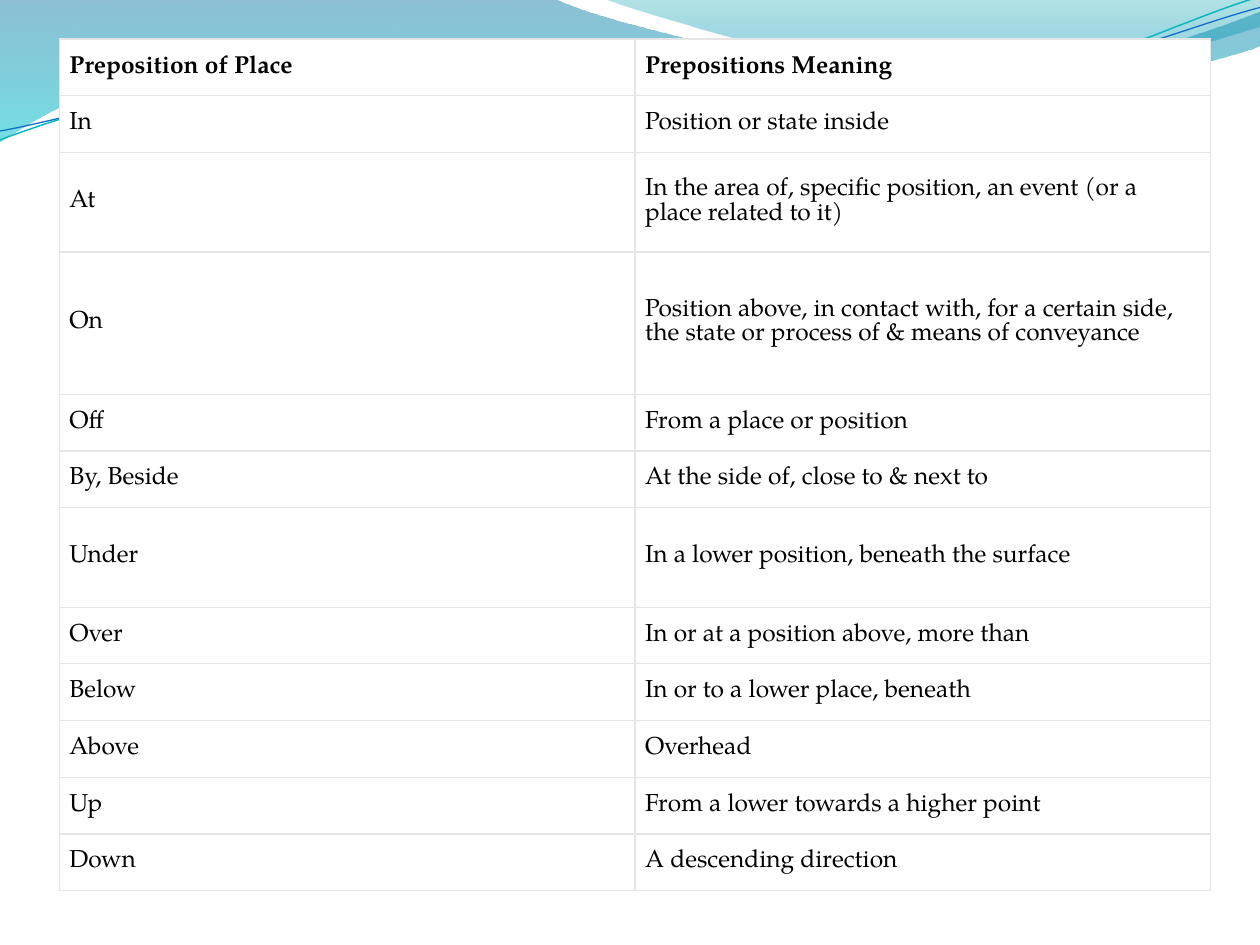
from dataclasses import dataclass
from math import cos, radians, sin

from lxml.etree import SubElement
from pptx import Presentation
from pptx.dml.color import RGBColor
from pptx.enum.text import MSO_ANCHOR
from pptx.oxml import parse_xml
from pptx.oxml.ns import nsdecls, qn
from pptx.util import Inches, Pt


@dataclass(frozen=True)
class Theme:
    font: str = "TeX Gyre Pagella"
    text_size: float = 14
    text: str = "000000"
    cell: str = "FFFFFF"
    border: str = "E5E5E5"
    border_width: float = 0.75
    # Gradient stops: position %, colour, opacity %
    wide_wave: tuple = ((0, "0074A1", 45), (100, "00C6CF", 55))
    top_wave: tuple = ((0, "00A1A9", 30), (80, "008BBF", 45))
    teal_line: str = "0AB8BF"
    blue_line: str = "0F6FC6"


@dataclass(frozen=True)
class Box:
    left: float
    top: float
    width: float
    height: float


THEME = Theme()
TILT = -2.7

# Outlines in inches: each step is one point (straight) or three (Bézier curve)
WIDE_WAVE = [
    [(0, 0)], [(4.4, -0.01)],
    [(4.76, 0.17), (6.64, 0.63), (7.58, 0.63)],
    [(8.53, 0.63), (9.58, 0.26), (10, 0.09)],
    [(10.01, 0.36)],
    [(9.83, 0.44), (8.7, 0.76), (7.46, 0.75)],
    [(6.22, 0.75), (3.82, 0.28), (2.57, 0.34)],
    [(1.29, 0.36), (0.46, 0.83), (-0.01, 1.13)],
    [(0, 0)],
]
TOP_WAVE = [
    [(4.79, -0.01)],
    [(5.09, 0.11), (6.82, 0.62), (7.69, 0.65)],
    [(8.56, 0.69), (9.61, 0.32), (10, 0.21)],
    [(10, 0)], [(4.79, -0.01)],
]
TEAL_LINE = [
    [(0, 1.11)],
    [(0.48, 0.93), (1.58, 0.57), (2.77, 0.52)],
    [(3.95, 0.47), (5.93, 0.89), (7.13, 0.8)],
    [(8.33, 0.71), (9.38, 0.15), (9.98, -0.02)],
]
BLUE_LINE = [
    [(0, 1.04)],
    [(0.47, 0.96), (1.64, 0.61), (2.83, 0.56)],
    [(4.03, 0.51), (5.97, 0.84), (7.17, 0.75)],
    [(8.36, 0.67), (9.41, 0.21), (10, 0.06)],
]

SHORT, MEDIUM, TALL = 0.45, 0.79, 1.13
PREPOSITIONS = [
    ("Preposition of Place", "Prepositions Meaning", SHORT),
    ("In", "Position or state inside", SHORT),
    ("At", "In the area of, specific position, an event (or a place related to it)", MEDIUM),
    ("On", "Position above, in contact with, for a certain side, "
           "the state or process of & means of conveyance", TALL),
    ("Off", "From a place or position", SHORT),
    ("By, Beside", "At the side of, close to & next to", SHORT),
    ("Under", "In a lower position, beneath the surface", MEDIUM),
    ("Over", "In or at a position above, more than", SHORT),
    ("Below", "In or to a lower place, beneath", SHORT),
    ("Above", "Overhead", SHORT),
    ("Up", "From a lower towards a higher point", SHORT),
    ("Down", "A descending direction", SHORT),
]


def turn(outline, center, degrees):
    """Rotate every point of an outline clockwise around a center."""
    cosine, sine = cos(radians(degrees)), sin(radians(degrees))
    center_x, center_y = center
    return [[(center_x + (x - center_x) * cosine - (y - center_y) * sine,
              center_y + (x - center_x) * sine + (y - center_y) * cosine)
             for x, y in step] for step in outline]


def add_outline(page, box, outline, close):
    points = [(Inches(box.left + x), Inches(box.top + y)) for step in outline for x, y in step]
    builder = page.shapes.build_freeform(*points[0])
    builder.add_line_segments(points[1:], close=close)
    shape = builder.convert_to_shape()
    shape.shadow.inherit = False
    # Merge the three straight steps of each curve into one Bézier segment
    segments = iter(shape.element.findall(".//" + qn("a:lnTo")))
    for step in outline[1:]:
        group = [next(segments) for _ in step]
        if len(group) == 3:
            curve = group[0].makeelement(qn("a:cubicBezTo"))
            group[0].addprevious(curve)
            for segment in group:
                curve.append(segment[0])
                segment.getparent().remove(segment)
    return shape


def add_wave(page, box, outline, stops):
    shape = add_outline(page, box, outline, close=True)
    shape.line.fill.background()
    stop_list = "".join(
        f'<a:gs pos="{position * 1000}"><a:srgbClr val="{color}">'
        f'<a:alpha val="{opacity * 1000}"/></a:srgbClr></a:gs>'
        for position, color, opacity in stops)
    gradient = parse_xml(
        f'<a:gradFill {nsdecls("a")} rotWithShape="1"><a:gsLst>{stop_list}</a:gsLst>'
        '<a:lin ang="5400000" scaled="0"/></a:gradFill>')
    shape.element.spPr.find(qn("a:custGeom")).addnext(gradient)


def add_curve(page, box, outline, center, color, width):
    shape = add_outline(page, box, turn(outline, center, -TILT), close=False)
    shape.rotation = TILT
    shape.fill.background()
    shape.line.color.rgb = RGBColor.from_string(color)
    shape.line.width = Pt(width)


def add_waves(page, box):
    add_wave(page, box, WIDE_WAVE, THEME.wide_wave)
    add_wave(page, box, TOP_WAVE, THEME.top_wave)
    add_curve(page, box, TEAL_LINE, (4.99, 0.57), THEME.teal_line, 0.85)
    add_curve(page, box, BLUE_LINE, (5, 0.59), THEME.blue_line, 0.75)


def set_borders(cell):
    properties = cell._tc.get_or_add_tcPr()
    for index, side in enumerate(("lnL", "lnR", "lnT", "lnB")):
        line = properties.makeelement(qn(f"a:{side}"), {"w": str(Pt(THEME.border_width))})
        fill = SubElement(line, qn("a:solidFill"))
        SubElement(fill, qn("a:srgbClr"), val=THEME.border)
        properties.insert(index, line)


def fill_cell(cell, text, bold):
    cell.fill.solid()
    cell.fill.fore_color.rgb = RGBColor.from_string(THEME.cell)
    cell.vertical_anchor = MSO_ANCHOR.MIDDLE
    cell.margin_left = cell.margin_right = Inches(0.08)
    cell.margin_top = cell.margin_bottom = Inches(0.04)
    set_borders(cell)
    span = cell.text_frame.paragraphs[0].add_run()
    span.text = text
    span.font.name = THEME.font
    span.font.size = Pt(THEME.text_size)
    span.font.bold = bold
    span.font.color.rgb = RGBColor.from_string(THEME.text)


def add_preposition_table(page, box):
    table = page.shapes.add_table(
        len(PREPOSITIONS), 2, Inches(box.left), Inches(box.top),
        Inches(box.width), Inches(box.height)).table
    table.first_row = table.horz_banding = False
    for column in table.columns:
        column.width = Inches(box.width / 2)
    for row_index, (word, meaning, height) in enumerate(PREPOSITIONS):
        table.rows[row_index].height = Inches(height)
        for column_index, text in enumerate((word, meaning)):
            fill_cell(table.cell(row_index, column_index), text, bold=row_index == 0)


def main():
    deck = Presentation()
    deck.slide_width, deck.slide_height = Inches(10), Inches(7.5)
    page = deck.slides.add_slide(deck.slide_layouts[6])
    # Decoration along the top edge
    add_waves(page, Box(0, 0, 10, 1.13))
    # Prepositions and their meanings
    add_preposition_table(page, Box(0.47, 0.31, 9.14, 6.76))
    deck.save("out.pptx")


if __name__ == "__main__":
    main()
